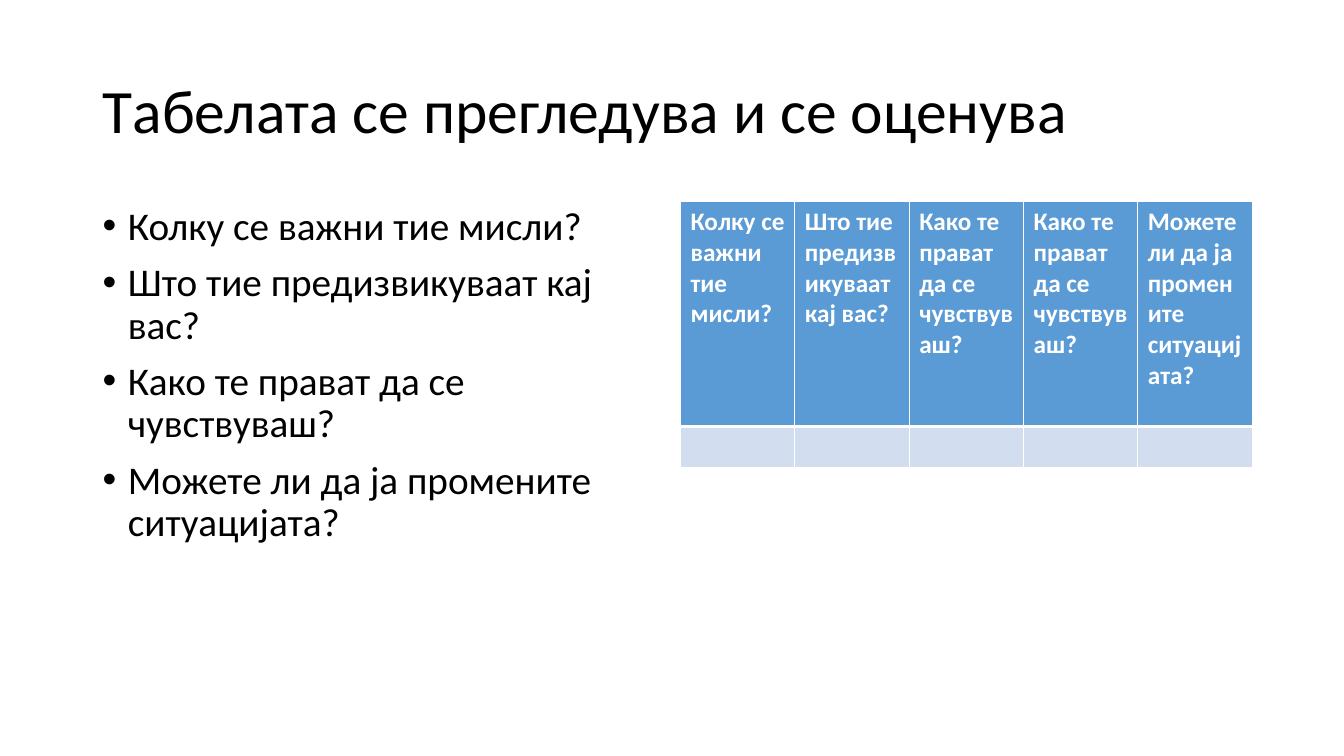
from dataclasses import dataclass

from lxml.etree import SubElement
from pptx import Presentation
from pptx.dml.color import RGBColor
from pptx.enum.text import MSO_ANCHOR
from pptx.oxml.ns import qn
from pptx.util import Inches, Pt


@dataclass(frozen=True)
class Theme:
    font: str = "Calibri"
    text: str = "000000"
    light: str = "FFFFFF"
    header: str = "5B9BD5"
    band: str = "D2DEEF"
    title_size: int = 44
    body_size: int = 28
    table_size: int = 18


TITLE = "Tабелата се прегледува и се оценува"
IMPORTANCE = "Колку се важни тие мисли?"
EFFECT = "Што тие предизвикуваат кај вас?"
FEELING = "Како те прават да се чувствуваш?"
CHANGE = "Можете ли да ја промените ситуацијата?"
QUESTIONS = [IMPORTANCE, EFFECT, FEELING, CHANGE]
HEADINGS = [IMPORTANCE, EFFECT, FEELING, FEELING, CHANGE]


class SlideBuilder:
    def __init__(self, slide, theme):
        self.slide = slide
        self.theme = theme

    def add_text(self, paragraph, text, size, color, bold=False):
        run = paragraph.add_run()
        run.text = text
        font_format = {"name": self.theme.font, "size": Pt(size), "bold": bold}
        for name, value in font_format.items():
            setattr(run.font, name, value)
        run.font.color.rgb = RGBColor.from_string(color)

    def text_box(self, box, lines, size, anchor=MSO_ANCHOR.TOP, bulleted=False):
        frame = self.slide.shapes.add_textbox(*map(Inches, box)).text_frame
        frame.word_wrap = True
        frame.vertical_anchor = anchor
        for index, line in enumerate(lines):
            paragraph = frame.add_paragraph() if index else frame.paragraphs[0]
            paragraph.line_spacing = 0.9
            if bulleted:
                paragraph.space_before = Pt(10)
                self.bullet(paragraph)
            self.add_text(paragraph, line, size, self.theme.text)

    def bullet(self, paragraph):
        properties = paragraph._p.get_or_add_pPr()
        properties.set("marL", str(Inches(0.25)))
        properties.set("indent", str(Inches(-0.25)))
        SubElement(properties, qn("a:buFont"), typeface="Arial")
        SubElement(properties, qn("a:buChar"), char="•")

    def table(self, box, headings, row_heights):
        table = self.slide.shapes.add_table(
            len(row_heights), len(headings), *map(Inches, box)
        ).table
        for row, height in zip(table.rows, row_heights):
            row.height = Inches(height)
        for column, heading in enumerate(headings):
            header, answer = (table.cell(row, column) for row in range(2))
            self.style_cell(header, self.theme.header, bottom=3)
            self.style_cell(answer, self.theme.band, top=3)
            self.add_text(header.text_frame.paragraphs[0], heading,
                          self.theme.table_size, self.theme.light, bold=True)

    def style_cell(self, cell, fill, top=1, bottom=1):
        """Fill a cell and draw its borders, with widths in points."""
        properties = cell._tc.get_or_add_tcPr()
        borders = {"a:lnL": 1, "a:lnR": 1, "a:lnT": top, "a:lnB": bottom}
        for tag, width in borders.items():
            line = SubElement(properties, qn(tag), w=str(Pt(width)))
            solid = SubElement(line, qn("a:solidFill"))
            SubElement(solid, qn("a:srgbClr"), val=self.theme.light)
        cell.fill.solid()
        cell.fill.fore_color.rgb = RGBColor.from_string(fill)


def main():
    presentation = Presentation()
    presentation.slide_width = Inches(13.33)
    presentation.slide_height = Inches(7.5)
    theme = Theme()
    slide = presentation.slides.add_slide(presentation.slide_layouts[6])
    builder = SlideBuilder(slide, theme)
    builder.text_box((0.92, 0.4, 11.5, 1.45), [TITLE], theme.title_size,
                     anchor=MSO_ANCHOR.MIDDLE)
    builder.text_box((0.92, 2, 5.67, 4.76), QUESTIONS, theme.body_size,
                     bulleted=True)
    builder.table((6.75, 2, 5.67, 2.64), HEADINGS, (2.23, 0.41))
    presentation.save("out.pptx")


if __name__ == "__main__":
    main()
